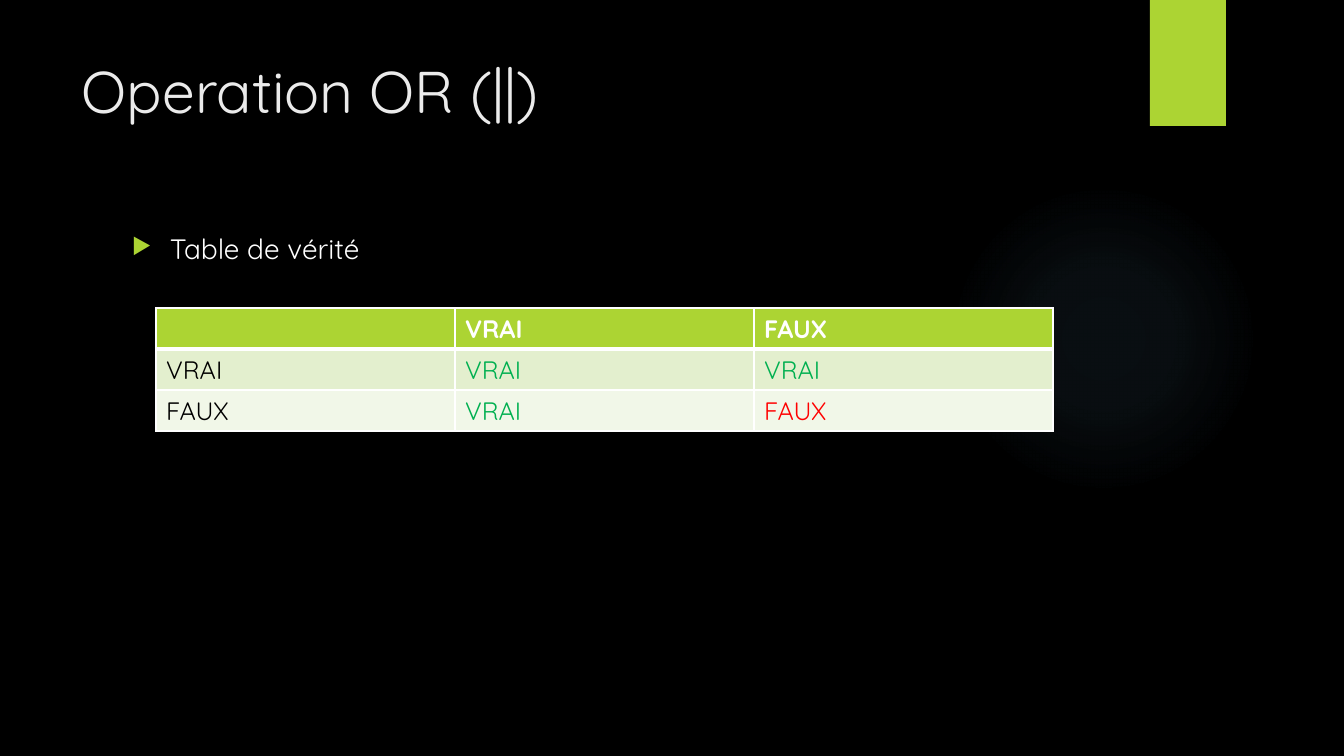
from lxml import etree
from pptx import Presentation
from pptx import util as u
from pptx.dml.color import RGBColor
from pptx.enum import shapes, text
from pptx.oxml import parse_xml
from pptx.oxml.ns import nsdecls, qn

PX = 914400 / 100.8
FONT = "Quicksand"
LIME, WHITE, BLACK = "ACD433", "FFFFFF", "000000"
GREEN, RED = "00B050", "FF0000"


def color(value):
    return RGBColor.from_string(value)


def add_run(paragraph, words, size, ink, bold=False):
    run = paragraph.add_run()
    run.text = words
    run.font.name = FONT
    run.font.size = u.Pt(size)
    run.font.bold = bold
    run.font.color.rgb = color(ink)


presentation = Presentation()
presentation.slide_width = u.Emu(round(1344 * PX))
presentation.slide_height = u.Emu(round(756 * PX))
slide = presentation.slides.add_slide(presentation.slide_layouts[6])
slide.background.fill.solid()
slide.background.fill.fore_color.rgb = color(BLACK)

# Soft glow and lime tab
decorations = []
for preset, box in ((shapes.MSO_SHAPE.OVAL, (949, 184, 310, 310)),
                    (shapes.MSO_SHAPE.RECTANGLE, (1150, 0, 76, 126))):
    shape = slide.shapes.add_shape(preset, *(round(n * PX) for n in box))
    shape.shadow.inherit = False
    shape.line.fill.background()
    shape.fill.solid()
    shape.fill.fore_color.rgb = color(LIME)
    decorations.append(shape)
glow = decorations[0]
stops = "".join(
    f'<a:gs pos="{position * 1000}"><a:srgbClr val="7AC4F0">'
    f'<a:alpha val="{alpha * 1000}"/></a:srgbClr></a:gs>'
    for position, alpha in ((0, 7), (36, 6), (69, 0), (100, 0)))
gradient = parse_xml(
    f'<a:gradFill {nsdecls("a")} rotWithShape="1"><a:gsLst>{stops}</a:gsLst>'
    '<a:path path="circle"><a:fillToRect l="50000" t="50000" r="50000" b="50000"/>'
    '</a:path></a:gradFill>')
solid = glow.fill._xPr.find(qn("a:solidFill"))
solid.getparent().replace(solid, gradient)

# Title and bulleted line
paragraphs = []
for box, words, size, ink in (
        ((72, 50, 1037, 154), "Operation OR (||)", 42, "EBEBEB"),
        ((122, 227, 986, 463), "Table de vérité", 20, WHITE)):
    frame = slide.shapes.add_textbox(*(round(n * PX) for n in box)).text_frame
    frame.word_wrap = True
    frame.vertical_anchor = text.MSO_ANCHOR.TOP
    add_run(frame.paragraphs[0], words, size, ink)
    paragraphs.append(frame.paragraphs[0])
bullet = paragraphs[1]._p.get_or_add_pPr()
indent = round(38 * PX)
bullet.set("marL", str(indent))
bullet.set("indent", str(-indent))
bullet_color = etree.SubElement(bullet, qn("a:buClr"))
etree.SubElement(bullet_color, qn("a:srgbClr"), val=LIME)
etree.SubElement(bullet, qn("a:buSzPct"), val="80000")
etree.SubElement(bullet, qn("a:buChar"), char="▶")

# Truth table
rows = (("", "VRAI", "FAUX"), ("VRAI", "VRAI", "VRAI"), ("FAUX", "VRAI", "FAUX"))
row_fills = (LIME, "E3EFCE", "F1F7E8")
column_width, row_height = 299, 41
table = slide.shapes.add_table(
    3, 3, round(156 * PX), round(308 * PX),
    round(3 * column_width * PX), round(3 * row_height * PX)).table
for column in table.columns:
    column.width = round(column_width * PX)
for r, values in enumerate(rows):
    table.rows[r].height = round(row_height * PX)
    for c, value in enumerate(values):
        cell = table.cell(r, c)
        properties = cell._tc.get_or_add_tcPr()
        for side in "LRTB":
            # The rule under the header is thicker
            points = 3 if (r, side) in ((0, "B"), (1, "T")) else 1
            border = etree.SubElement(properties, qn(f"a:ln{side}"), w=str(u.Pt(points)))
            border_fill = etree.SubElement(border, qn("a:solidFill"))
            etree.SubElement(border_fill, qn("a:srgbClr"), val=WHITE)
        cell.fill.solid()
        cell.fill.fore_color.rgb = color(row_fills[r])
        if r == 0:
            ink = WHITE
        elif c == 0:
            ink = BLACK
        else:
            ink = GREEN if value == "VRAI" else RED
        if value:
            add_run(cell.text_frame.paragraphs[0], value, 18, ink, bold=r == 0)

presentation.save("out.pptx")
